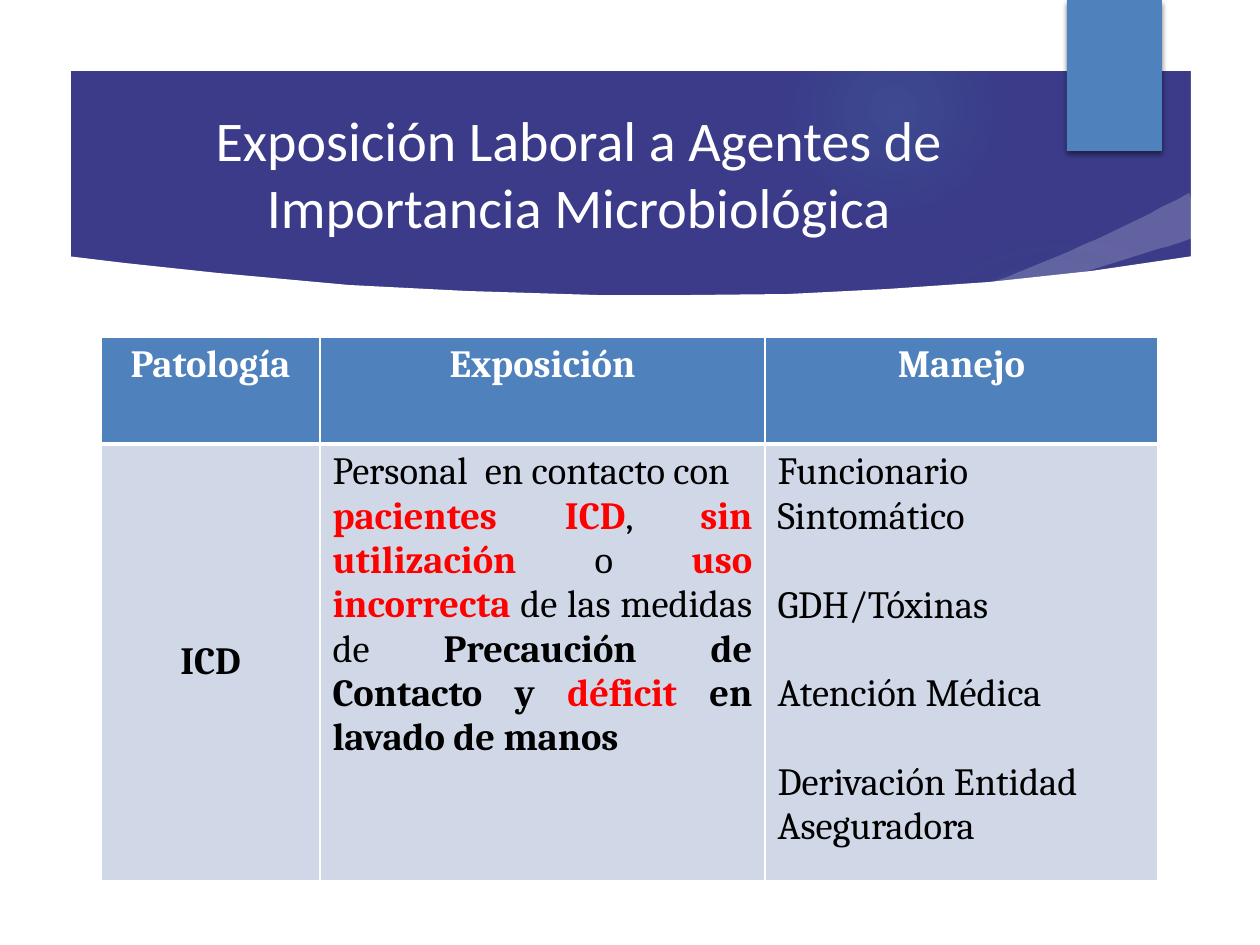
from math import comb

from pptx import Presentation
from pptx.dml.color import RGBColor
from pptx.enum.shapes import MSO_SHAPE
from pptx.enum.text import MSO_ANCHOR, PP_ALIGN
from pptx.oxml import parse_xml
from pptx.oxml.ns import nsdecls, qn
from pptx.util import Pt

PX = 914400 / 126
WIDTH, HEIGHT = 1260, 945
WHITE, BLACK, RED = "FFFFFF", "000000", "FF0000"
NAVY, BLUE, PALE, TEAL = "3B3B89", "4F81BD", "D0D8E8", "4BACC6"
BLANK_LINE = 25.4


def px(*lengths):
    return [round(length * PX) for length in lengths]


def rgb(value):
    return RGBColor.from_string(value)


def paint(shape, color):
    shape.shadow.inherit = False
    shape.line.fill.background()
    shape.fill.solid()
    shape.fill.fore_color.rgb = rgb(color)


def add_outline(slide, contours, color):
    builder = slide.shapes.build_freeform(*contours[0][0], scale=PX)
    for number, contour in enumerate(contours):
        if number:
            builder.move_to(*contour[0])
        builder.add_line_segments(contour[1:], close=True)
    outline = builder.convert_to_shape()
    paint(outline, color)
    return outline


def bezier(controls, steps=24):
    """Points along a Bezier curve of any degree."""
    degree = len(controls) - 1
    points = []
    for step in range(steps + 1):
        t = step / steps
        weights = [comb(degree, i) * t**i * (1 - t) ** (degree - i)
                   for i in range(degree + 1)]
        points.append(tuple(round(sum(w * c[axis] for w, c in zip(weights, controls)), 2)
                            for axis in (0, 1)))
    return points


def add_glow(slide, left, top, size, stops):
    """Round teal light; stops are (position, opacity) in percent."""
    glow = slide.shapes.add_shape(MSO_SHAPE.OVAL, *px(left, top, size, size))
    glow.shadow.inherit = False
    glow.line.fill.background()
    glow.fill.background()
    stop_xml = "".join(
        f'<a:gs pos="{position * 1000}"><a:srgbClr val="{TEAL}">'
        f'<a:alpha val="{opacity * 1000}"/></a:srgbClr></a:gs>'
        for position, opacity in stops)
    gradient = parse_xml(
        f'<a:gradFill {nsdecls("a")}><a:gsLst>{stop_xml}</a:gsLst><a:path path="circle">'
        '<a:fillToRect l="50000" t="50000" r="50000" b="50000"/></a:path></a:gradFill>')
    properties = glow.element.spPr
    properties.replace(properties.find(qn("a:noFill")), gradient)


def add_swoosh(slide, left, top):
    lower = [(left + x, top + y) for x, y in ((4, 48), (59, 50), (248, 29), (328, 15))]
    upper = [(left + x, top + y) for x, y in ((321, -28), (147, 29), (0, 42))]
    swoosh = add_outline(slide, [bezier(lower) + bezier(upper)], WHITE)
    swoosh.rotation = 350.2
    color = swoosh.element.spPr.find(qn("a:solidFill"))[0]
    color.append(parse_xml(f'<a:alpha {nsdecls("a")} val="20000"/>'))


def add_panel(slide, left, top, width, height):
    """White body whose upper edge is the curved foot of the banner."""
    edge = [(0, 0), (58, 7), (151, 17), (282, 29), (400, 35), (530, 39), (623, 39),
            (721, 38), (820, 33), (922, 26), (1024, 15), (width, 0)]
    corners = [(width, height), (0, height)]
    add_outline(slide, [[(left + x, top + y) for x, y in edge + corners]], WHITE)


def add_frame(slide, left, top, right, bottom):
    outer = [(0, 0), (0, HEIGHT), (WIDTH, HEIGHT), (WIDTH, 0)]
    inner = [(left, top), (right, top), (right, bottom), (left, bottom)]
    add_outline(slide, [outer, inner], WHITE)


def add_tab(slide, left, top, width, height):
    tab = slide.shapes.add_shape(MSO_SHAPE.RECTANGLE, *px(left, top, width, height))
    paint(tab, BLUE)
    tab.element.spPr.find(qn("a:effectLst")).append(parse_xml(
        f'<a:outerShdw {nsdecls("a")} blurRad="38100" dist="25400" dir="5400000" '
        f'rotWithShape="0"><a:srgbClr val="{BLACK}"><a:alpha val="45000"/>'
        '</a:srgbClr></a:outerShdw>'))


def add_run(paragraph, text, font, size, color, bold=False):
    run = paragraph.add_run()
    run.text = text
    run.font.name = font
    run.font.size = Pt(size)
    run.font.bold = bold
    run.font.color.rgb = rgb(color)


def add_title(slide, left, top, width, height):
    frame = slide.shapes.add_textbox(*px(left, top, width, height)).text_frame
    frame.word_wrap = True
    frame.vertical_anchor = MSO_ANCHOR.MIDDLE
    paragraph = frame.paragraphs[0]
    paragraph.alignment = PP_ALIGN.CENTER
    add_run(paragraph, "Exposición Laboral a Agentes de Importancia Microbiológica",
            "Calibri", 32, WHITE)


def style_cell(cell, color, top=1, bottom=1):
    properties = cell._tc.get_or_add_tcPr()
    for side, points in (("L", 1), ("R", 1), ("T", top), ("B", bottom)):
        properties.append(parse_xml(
            f'<a:ln{side} {nsdecls("a")} w="{points * 12700}"><a:solidFill>'
            f'<a:srgbClr val="{WHITE}"/></a:solidFill></a:ln{side}>'))
    cell.fill.solid()
    cell.fill.fore_color.rgb = rgb(color)


def write_cell(cell, paragraphs, alignment, gap=0):
    """Each paragraph is a list of (text, color, bold) runs."""
    frame = cell.text_frame
    for number, runs in enumerate(paragraphs):
        paragraph = frame.add_paragraph() if number else frame.paragraphs[0]
        paragraph.alignment = alignment
        if number and gap:
            paragraph.space_before = Pt(gap)
        for text, color, bold in runs:
            add_run(paragraph, text, "Cambria", 22, color, bold)


def add_exposure_table(slide, left, top, widths, heights):
    table = slide.shapes.add_table(
        2, 3, *px(left, top, sum(widths), sum(heights))).table
    for column, width in zip(table.columns, px(*widths)):
        column.width = width
    for row, height in zip(table.rows, px(*heights)):
        row.height = height

    for column, heading in enumerate(("Patología", "Exposición", "Manejo")):
        style_cell(table.cell(0, column), BLUE, bottom=3)
        style_cell(table.cell(1, column), PALE, top=3)
        write_cell(table.cell(0, column), [[(heading, WHITE, True)]], PP_ALIGN.CENTER)

    pathology, exposure, management = table.rows[1].cells
    pathology.vertical_anchor = MSO_ANCHOR.MIDDLE
    write_cell(pathology, [[("ICD", BLACK, True)]], PP_ALIGN.CENTER)
    write_cell(exposure, [
        [("Personal  en contacto con", BLACK, False)],
        [("pacientes ICD", RED, True), (", ", BLACK, False),
         ("sin utilización ", RED, True), ("o ", BLACK, False),
         ("uso incorrecta ", RED, True), ("de las medidas de ", BLACK, False),
         ("Precaución de Contacto y ", BLACK, True), ("déficit", RED, True),
         (" en lavado de manos", BLACK, True)],
    ], PP_ALIGN.JUSTIFY)
    steps = ("Funcionario Sintomático", "GDH/Tóxinas", "Atención Médica",
             "Derivación Entidad Aseguradora")
    write_cell(management, [[(step, BLACK, False)] for step in steps],
               PP_ALIGN.LEFT, BLANK_LINE)


def main():
    deck = Presentation()
    deck.slide_width, deck.slide_height = px(WIDTH, HEIGHT)
    slide = deck.slides.add_slide(deck.slide_layouts[6])
    slide.background.fill.solid()
    slide.background.fill.fore_color.rgb = rgb(NAVY)

    add_glow(slide, 868, 231, 388, [(0, 7), (36, 6), (69, 0), (100, 0)])
    add_glow(slide, 784, 0, 220, [(0, 14), (36, 7), (73, 0), (100, 0)])
    add_swoosh(slide, 877, 247)
    add_panel(slide, 67, 256, 1126, 625)
    add_frame(slide, 71, 71, 1191, 876)
    add_tab(slide, 1067, 0, 95, 151)
    add_title(slide, 142, 124, 874, 98)
    add_exposure_table(slide, 101, 337, (219, 445, 393), (107, 437))
    deck.save("out.pptx")


if __name__ == "__main__":
    main()
